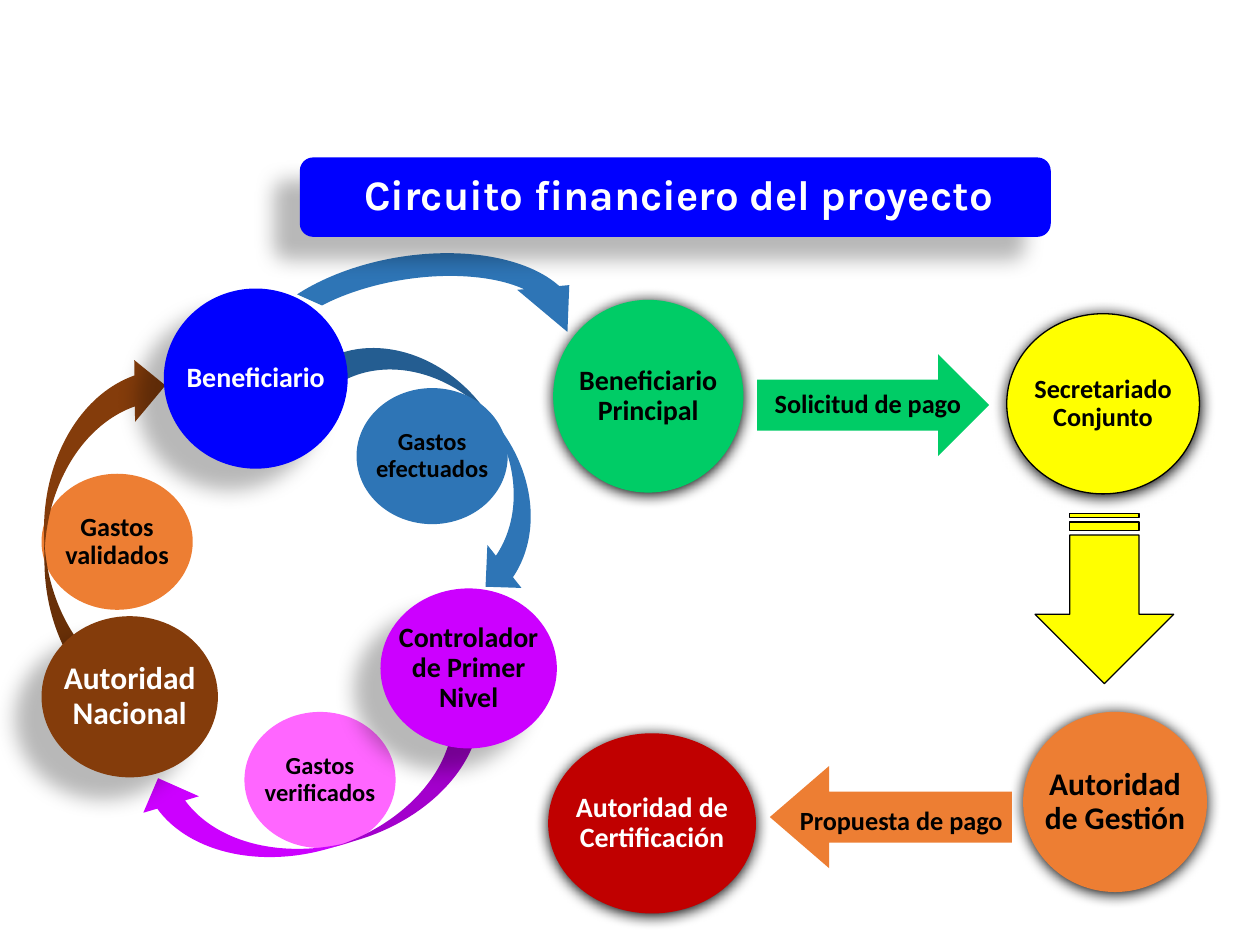
import pptx
import pptx.util
import pptx.dml.color
import pptx.enum.shapes
import pptx.enum.text
import pptx.oxml

RGBColor = pptx.dml.color.RGBColor
KIND = pptx.enum.shapes.MSO_SHAPE
ALIGN = pptx.enum.text.PP_ALIGN
MIDDLE = pptx.enum.text.MSO_ANCHOR.MIDDLE

BLACK = RGBColor(0x00, 0x00, 0x00)
WHITE = RGBColor(0xFF, 0xFF, 0xFF)
BLUE = RGBColor(0x00, 0x00, 0xFF)
STEEL = RGBColor(0x2E, 0x75, 0xB6)
PINK = RGBColor(0xFF, 0x66, 0xFF)
PURPLE = RGBColor(0xCC, 0x00, 0xFF)
ORANGE = RGBColor(0xED, 0x7E, 0x33)
BROWN = RGBColor(0x84, 0x3C, 0x0B)
GREEN = RGBColor(0x00, 0xCC, 0x66)
RED = RGBColor(0xC0, 0x00, 0x00)
YELLOW = RGBColor(0xFF, 0xFF, 0x00)

# Shadows: blur, distance (points), direction (degrees), opacity (percent)
SOFT = (11.8, 19.7, 141, 28)
HALO = (8.5, 1, 90, 100)

deck = pptx.Presentation()
deck.slide_width = pptx.util.Inches(10)
deck.slide_height = pptx.util.Inches(7.5)
page = deck.slides.add_slide(deck.slide_layouts[5])
COLUMN = deck.slide_width / 10
ROW = deck.slide_height / 7.5


def add_figure(kind, place, color, shadow=None, turn=0, flips=""):
    left, top, width, height = place
    figure = page.shapes.add_shape(kind, int(left * COLUMN), int(top * ROW),
                                   int(width * COLUMN), int(height * ROW))
    figure.rotation = turn
    for axis in flips:
        figure.element.spPr.xfrm.set("flip" + axis, "1")
    figure.fill.solid()
    figure.fill.fore_color.rgb = color
    if color == YELLOW:
        figure.line.color.rgb = BLACK
        figure.line.width = pptx.util.Pt(0.75)
    else:
        figure.line.fill.background()
    figure.shadow.inherit = False
    if shadow:
        blur, distance, direction, opacity = shadow
        effects = figure.element.spPr.find(pptx.oxml.ns.qn("a:effectLst"))
        effects.append(pptx.oxml.parse_xml(
            f'<a:outerShdw {pptx.oxml.ns.nsdecls("a")} blurRad="{pptx.util.Pt(blur)}" '
            f'dist="{pptx.util.Pt(distance)}" dir="{direction * 60000}" algn="ctr" '
            f'rotWithShape="0"><a:srgbClr val="000000"><a:alpha val="{opacity * 1000}"/>'
            '</a:srgbClr></a:outerShdw>'))
    return figure


def write(box, text, size, color, align=ALIGN.CENTER, name="Calibri"):
    box.text_frame.word_wrap = True
    box.text_frame.vertical_anchor = MIDDLE
    para = box.text_frame.paragraphs[0]
    para.alignment = align
    span = para.add_run()
    span.text = text
    span.font.name = name
    span.font.size = pptx.util.Pt(size)
    span.font.bold = True
    span.font.color.rgb = color
    return para


# Curved arrows: one behind all circles, three in front of the pale ones
bend = add_figure(KIND.LEFT_CIRCULAR_ARROW, (2.45, 1.3, 1.66, 2.89), STEEL,
                  turn=80.8, flips="V")
for index, value in enumerate((0.11, 11.423, 63, 142.141, 0.125)):
    bend.adjustments[index] = value

curves = [
    ((2.08, 4.84, 0.92, 2.87), PURPLE, 253.5, "HV"),
    ((0.35, 2.82, 0.98, 2.92), BROWN, 179.2, ""),
    ((3.14, 2.39, 0.87, 2.43), STEEL, 141.6, "HV"),
]

# Circles, back to front: place, fill, shadow, text, size, text colour, padding
circles = [
    ((1.94, 5.65, 1.2, 1.08), PINK, None, "Gastos verificados", 14, BLACK, 0.14),
    ((0.33, 3.76, 1.2, 1.08), ORANGE, None, "Gastos validados", 15, BLACK, 0.14),
    ((3.02, 4.67, 1.4, 1.27), PURPLE, SOFT, "Controlador de Primer Nivel", 16, BLACK, 0.14),
    ((1.3, 2.29, 1.46, 1.43), BLUE, SOFT, "Beneficiario", 16, WHITE, 0.14),
    ((2.83, 3.08, 1.2, 1.08), STEEL, None, "Gastos efectuados", 14, BLACK, 0.14),
    ((0.33, 4.89, 1.4, 1.28), BROWN, SOFT, "Autoridad Nacional", 18, WHITE, 0.14),
    ((4.39, 2.38, 1.51, 1.53), GREEN, HALO, "Beneficiario Principal", 16, BLACK, 0.14),
    ((4.35, 5.82, 1.65, 1.43), RED, HALO, "Autoridad de Certificación", 16, WHITE, 0.21),
    ((7.99, 2.49, 1.53, 1.43), YELLOW, HALO, "Secretariado Conjunto", 15, BLACK, 0.14),
    ((8.12, 5.65, 1.46, 1.43), ORANGE, HALO, "Autoridad de Gestión", 18, BLACK, 0.14),
]
for index, (place, fill, shadow, text, size, color, padding) in enumerate(circles):
    if index == 2:
        for curve_place, curve_fill, turn, flips in curves:
            add_figure(KIND.CURVED_LEFT_ARROW, curve_place, curve_fill,
                       turn=turn, flips=flips)
    circle = add_figure(KIND.OVAL, place, fill, shadow)
    # An oval already insets its text by 14.6 % of each side
    frame = circle.text_frame
    frame.margin_left = frame.margin_right = int((padding - 0.146 * place[2]) * COLUMN)
    frame.margin_top = frame.margin_bottom = int((padding - 0.146 * place[3]) * ROW)
    write(circle, text, size, color).line_spacing = 0.9

# Straight arrows
add_figure(KIND.RIGHT_ARROW, (6.01, 2.81, 1.84, 0.81), GREEN)
add_figure(KIND.STRIPED_RIGHT_ARROW, (8.09, 4.2, 1.35, 1.1), YELLOW, turn=90)
proposal = add_figure(KIND.LEFT_ARROW, (6.11, 6.08, 1.92, 0.81), ORANGE)
proposal.adjustments[1] = 0.58

# Arrow labels
for left, top, width, text in [(6.05, 3.02, 1.73, "Solicitud de pago"),
                               (6.25, 6.33, 2.04, "Propuesta de pago")]:
    label = page.shapes.add_textbox(int(left * COLUMN), int(top * ROW),
                                    int(width * COLUMN), int(0.35 * ROW))
    write(label, text, 15, BLACK, ALIGN.LEFT)

# Title on its banner
banner = add_figure(KIND.ROUNDED_RECTANGLE, (2.38, 1.25, 5.96, 0.63), BLUE, SOFT)
title = page.shapes.title
title.left, title.top = int(2.48 * COLUMN), int(1.2 * ROW)
title.width, title.height = int(5.81 * COLUMN), int(0.67 * ROW)
title.text_frame.auto_size = pptx.enum.text.MSO_AUTO_SIZE.NONE
write(title, "Circuito financiero del proyecto", 24, WHITE, name="Karla")
banner.element.addnext(title.element)

deck.save("out.pptx")
